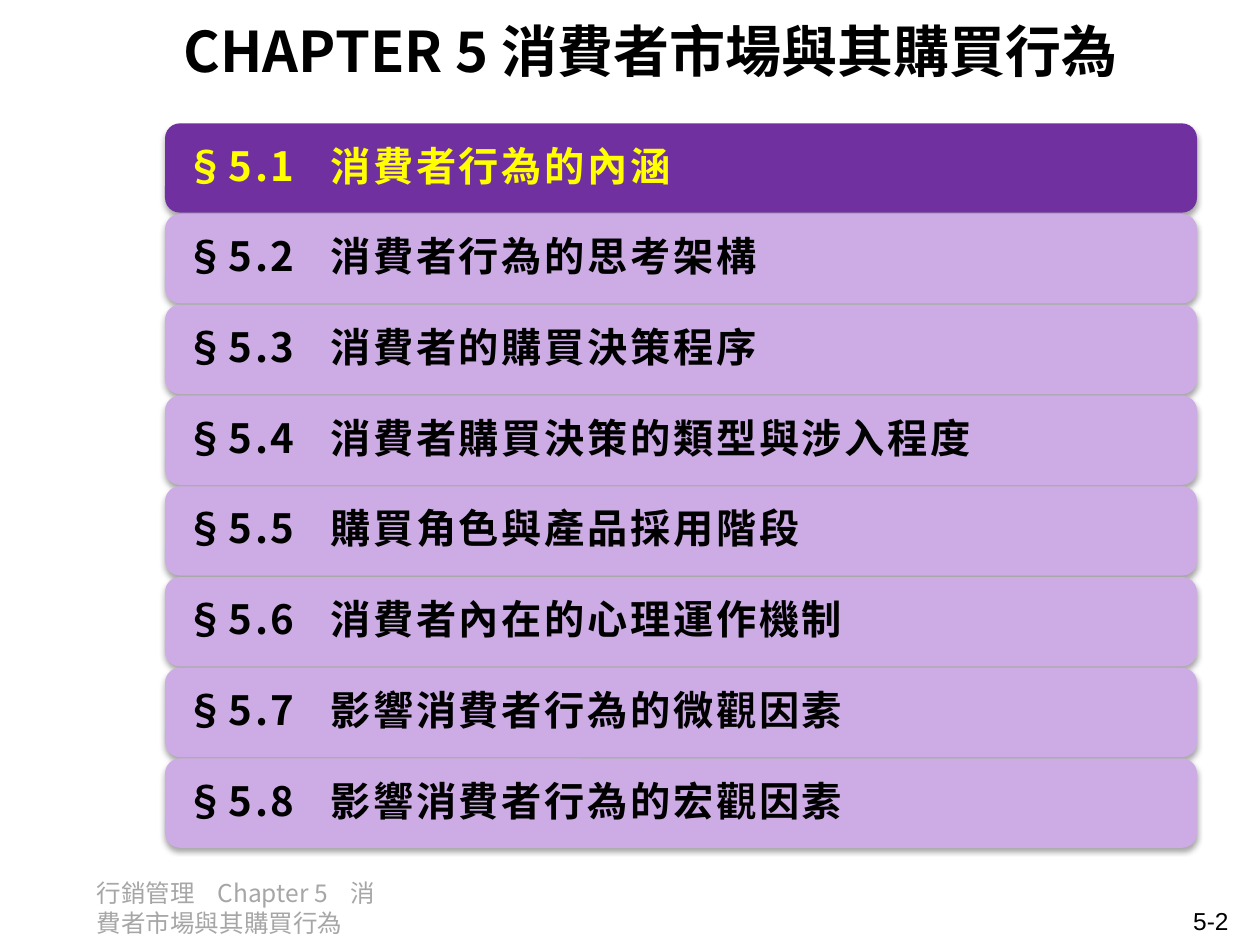
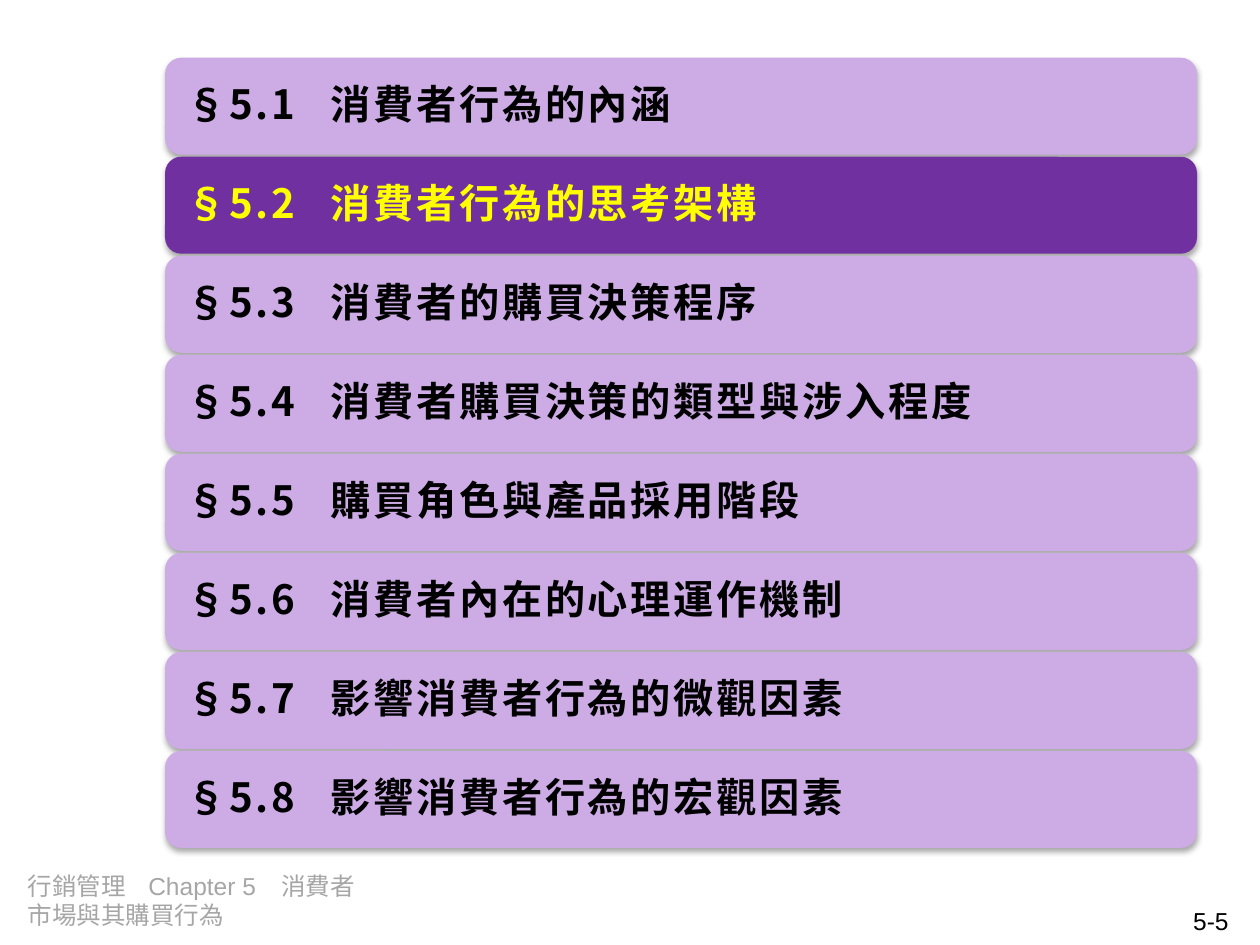
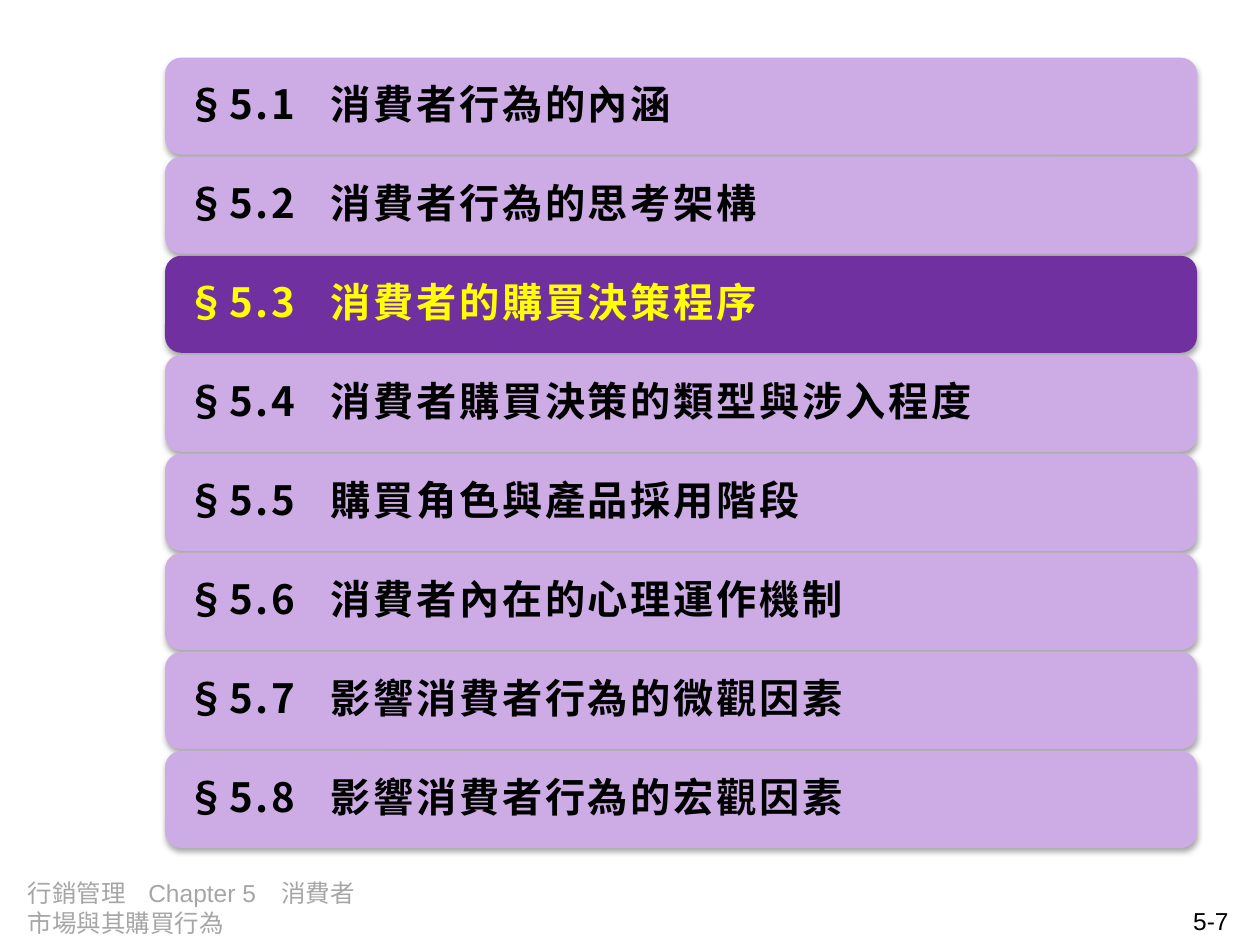
from lxml.etree import SubElement
from pptx import Presentation
from pptx.dml.color import RGBColor
from pptx.enum.shapes import MSO_SHAPE
from pptx.enum.text import MSO_ANCHOR, PP_ALIGN
from pptx.oxml import parse_xml
from pptx.oxml.ns import nsdecls, qn
from pptx.util import Pt

HUES = {
    "black": "000000",
    "grey": "A6A6A6",
    "deep": "7030A0",
    "pale": "CDACE6",
    "yellow": "FFFF00",
}
SANS = "Noto Sans CJK SC"
ARIAL = "Arial"
SHADOW = (
    f'<a:effectLst {nsdecls("a")}>'
    '<a:outerShdw blurRad="39370" dist="22860" dir="5400000" rotWithShape="0">'
    '<a:srgbClr val="000000"><a:alpha val="35000"/></a:srgbClr>'
    "</a:outerShdw></a:effectLst>"
)
TITLE = "CHAPTER 5 消費者市場與其購買行為"
FOOTER = "行銷管理\tChapter 5\t消費者市場與其購買行為"
TOPICS = [
    "消費者行為的內涵",
    "消費者行為的思考架構",
    "消費者的購買決策程序",
    "消費者購買決策的類型與涉入程度",
    "購買角色與產品採用階段",
    "消費者內在的心理運作機制",
    "影響消費者行為的微觀因素",
    "影響消費者行為的宏觀因素",
]
PAGES = [
    {"page": "5-2", "title": TITLE, "top": 70.5, "step": 51.85, "high": 51,
     "foot": (48.25, 498.3, 175.7), "font": SANS},
    {"page": "5-5", "title": "", "top": 33, "step": 56.6, "high": 55.4,
     "foot": (8.65, 494, 205.2), "font": ARIAL},
    {"page": "5-7", "title": "", "top": 33, "step": 56.6, "high": 55.4,
     "foot": (8.65, 498.3, 205.2), "font": ARIAL},
]


def write(shape, text, size, hue, font, bold=False, align=PP_ALIGN.LEFT, tabs=()):
    frame = shape.text_frame
    frame.word_wrap = True
    frame.text = text
    para = frame.paragraphs[0]
    if tabs:
        stops = SubElement(para._p.get_or_add_pPr(), qn("a:tabLst"))
        for stop in tabs:
            SubElement(stops, qn("a:tab"), pos=str(Pt(stop)), algn="l")
    para.alignment = align
    for run in para.runs:
        run.font.size = Pt(size)
        run.font.bold = bold
        run.font.name = font
        run.font.color.rgb = RGBColor.from_string(HUES[hue])
        SubElement(run._r.rPr, qn("a:ea"), typeface=SANS)
    return para


def add_box(slide, left, top, width, height):
    return slide.shapes.add_textbox(Pt(left), Pt(top), Pt(width), Pt(height))


deck = Presentation()
deck.slide_width = Pt(720)
deck.slide_height = Pt(540)

for now, page in enumerate(PAGES):
    slide = deck.slides.add_slide(deck.slide_layouts[6])

    if page["title"]:
        head = add_box(slide, 48, 0, 648, 57.6)
        head.text_frame.vertical_anchor = MSO_ANCHOR.MIDDLE
        write(head, page["title"], 32, "black", SANS, True, PP_ALIGN.CENTER)

    foot = add_box(slide, *page["foot"], 28)
    para = write(foot, FOOTER, 14, "grey", page["font"], tabs=(69, 145))
    para.line_spacing = Pt(16.8)

    mark = add_box(slide, 541.5, 514, 167.7, 21)
    write(mark, page["page"], 14, "black", ARIAL, align=PP_ALIGN.RIGHT)

    for row, topic in enumerate(TOPICS):
        top = page["top"] + row * page["step"]
        bar = slide.shapes.add_shape(
            MSO_SHAPE.ROUNDED_RECTANGLE, Pt(94.3), Pt(top), Pt(589.7), Pt(page["high"]))
        bar.fill.solid()
        bar.fill.fore_color.rgb = RGBColor.from_string(HUES["deep" if row == now else "pale"])
        bar.line.fill.background()
        bar._element.spPr.append(parse_xml(SHADOW))
        frame = bar.text_frame
        frame.margin_left = frame.margin_right = Pt(9.5)
        frame.vertical_anchor = MSO_ANCHOR.MIDDLE
        hue = "yellow" if row == now else "black"
        para = write(bar, f"§5.{row + 1}\t{topic}", 23, hue, SANS, True, tabs=(82.5,))
        para.line_spacing = 0.9
        for run in para.runs:
            run._r.rPr.set("spc", "150")

deck.save("out.pptx")
